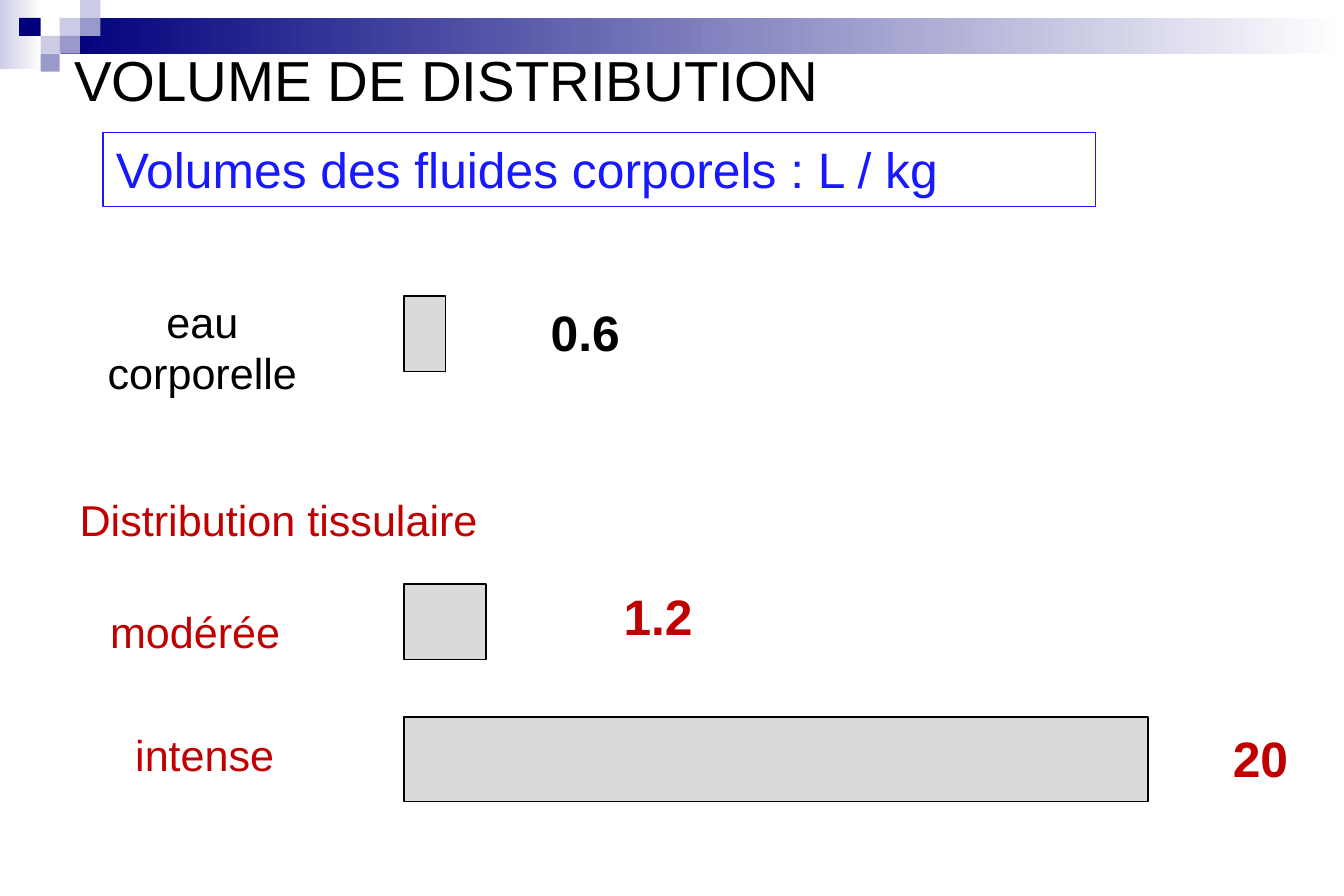
from dataclasses import dataclass

from pptx import Presentation
from pptx.dml.color import RGBColor
from pptx.enum.shapes import MSO_SHAPE
from pptx.enum.text import MSO_ANCHOR, MSO_AUTO_SIZE, PP_ALIGN
from pptx.util import Inches, Pt


@dataclass(frozen=True)
class Theme:
    font: str = "Arial"
    black: str = "000000"
    white: str = "FFFFFF"
    red: str = "C00000"
    blue: str = "1818FF"
    navy: str = "00007D"
    lavender: str = "CCCCE6"
    violet: str = "9999CC"
    grey: str = "DADADA"
    title_size: int = 34
    value_size: int = 30
    label_size: int = 26


THEME = Theme()
MOSAIC_EDGES = (0.16, 0.34, 0.5, 0.67, 0.84)
MOSAIC_ROW = 0.15
MOSAIC_TILES = (
    (2, 1, THEME.lavender),
    (3, 0, THEME.lavender),
    (3, 1, THEME.violet),
    (1, 2, THEME.lavender),
    (0, 1, THEME.navy),
    (2, 2, THEME.violet),
    (1, 3, THEME.violet),
)
BAR_LEFT = 3.38
BARS = ((2.48, 0.35, 0.63), (4.89, 0.69, 0.63), (6, 6.23, 0.71))
VALUES = (
    ("0.6", (4.5, 2.48, 1.3, 0.61), THEME.black),
    ("1.2", (5.11, 4.85, 1.3, 0.61), THEME.red),
    ("20", (10.21, 6.04, 0.86, 0.61), THEME.red),
)
LABELS = (
    ("eau\ncorporelle", (0.8, 2.42, 1.79, 0.97), THEME.black),
    ("Distribution tissulaire", (0.57, 4.08, 3.53, 0.53), THEME.red),
    ("modérée", (0.82, 5.02, 1.63, 0.53), THEME.red),
    ("intense", (1.03, 6.05, 1.37, 0.53), THEME.red),
)


def rgb(colour):
    return RGBColor.from_string(colour)


def inches(box):
    return [Inches(length) for length in box]


def write(frame, text, size, colour, bold=False, align=PP_ALIGN.LEFT,
          anchor=MSO_ANCHOR.TOP, wrap=True):
    frame.text = text
    frame.word_wrap = wrap
    frame.auto_size = MSO_AUTO_SIZE.NONE
    frame.vertical_anchor = anchor
    frame.margin_left = frame.margin_right = Inches(0.11)
    frame.margin_top = frame.margin_bottom = Inches(0.05)
    for paragraph in frame.paragraphs:
        paragraph.alignment = align
        paragraph.font.name = THEME.font
        paragraph.font.size = Pt(size)
        paragraph.font.bold = bold
        paragraph.font.color.rgb = rgb(colour)


def add_rectangle(slide, box, fill=None, line=None):
    rectangle = slide.shapes.add_shape(MSO_SHAPE.RECTANGLE, *inches(box))
    rectangle.shadow.inherit = False
    if fill:
        rectangle.fill.solid()
        rectangle.fill.fore_color.rgb = rgb(fill)
    else:
        rectangle.fill.background()
    if line:
        rectangle.line.color.rgb = rgb(line)
        rectangle.line.width = Pt(1)
    else:
        rectangle.line.fill.background()
    return rectangle


def add_fade(slide, box, colour):
    fade = add_rectangle(slide, box)
    fade.fill.gradient()
    fade.fill.gradient_angle = 0
    for stop, stop_colour in zip(fade.fill.gradient_stops, (colour, THEME.white)):
        stop.color.rgb = rgb(stop_colour)


def add_banner(slide):
    add_fade(slide, (0, 0, 0.35, 0.58), THEME.lavender)
    add_fade(slide, (0.51, 0.15, 10.74, 0.3), THEME.navy)
    for column, row, colour in MOSAIC_TILES:
        left, right = MOSAIC_EDGES[column:column + 2]
        add_rectangle(slide, (left, row * MOSAIC_ROW, right - left, MOSAIC_ROW), colour)


def add_title(slide, text):
    title = slide.shapes.title
    title.left, title.top, title.width, title.height = inches((0.51, 0.33, 8.39, 0.67))
    write(title.text_frame, text, THEME.title_size, THEME.black, anchor=MSO_ANCHOR.MIDDLE)


def add_subtitle(slide, text):
    subtitle = add_rectangle(slide, (0.86, 1.11, 8.31, 0.62), line=THEME.blue)
    write(subtitle.text_frame, text, THEME.value_size, THEME.blue)


def add_value(slide, text, box, colour):
    value = slide.shapes.add_textbox(*inches(box))
    write(value.text_frame, text, THEME.value_size, colour, bold=True)


def add_label(slide, text, box, colour):
    label = slide.shapes.add_textbox(*inches(box))
    write(label.text_frame, text, THEME.label_size, colour,
          align=PP_ALIGN.CENTER, wrap=False)


def main():
    presentation = Presentation()
    presentation.slide_width = Inches(11.25)
    presentation.slide_height = Inches(7.5)
    slide = presentation.slides.add_slide(presentation.slide_layouts.get_by_name("Title Only"))
    add_banner(slide)
    add_title(slide, "VOLUME DE DISTRIBUTION")
    add_subtitle(slide, "Volumes des fluides corporels : L / kg")
    for top, width, height in BARS:
        add_rectangle(slide, (BAR_LEFT, top, width, height), THEME.grey, THEME.black)
    for value in VALUES:
        add_value(slide, *value)
    for label in LABELS:
        add_label(slide, *label)
    presentation.save("out.pptx")


if __name__ == "__main__":
    main()
